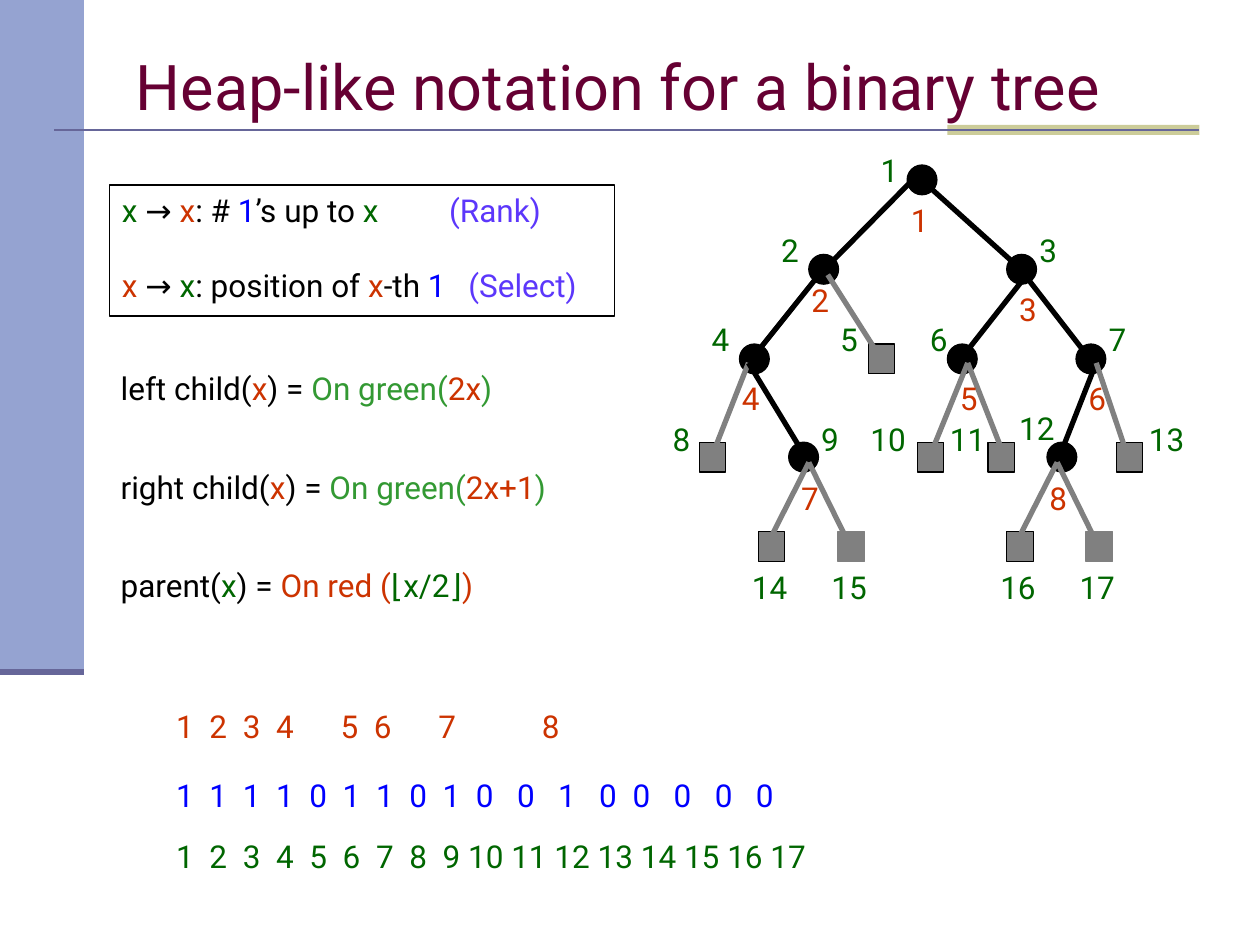
from dataclasses import dataclass
from itertools import accumulate
from typing import Optional

from lxml import etree
from pptx import Presentation, util as u
from pptx.dml.color import RGBColor
from pptx.enum import shapes, text
from pptx.oxml.ns import qn

Pt = u.Pt
FONT = "Roboto"
BLACK = RGBColor(0x00, 0x00, 0x00)
GRAY = RGBColor(0x80, 0x80, 0x80)
GREEN = RGBColor(0x00, 0x66, 0x00)
LIGHT_GREEN = RGBColor(0x33, 0x99, 0x33)
RED = RGBColor(0xCC, 0x33, 0x00)
BLUE = RGBColor(0x00, 0x00, 0xFF)
VIOLET = RGBColor(0x5C, 0x37, 0xFB)
MAROON = RGBColor(0x66, 0x00, 0x33)
BAND = RGBColor(0x95, 0xA3, 0xD1)
RULE = RGBColor(0x66, 0x66, 0x99)
SAND = RGBColor(0xCC, 0xCC, 0x99)

DIGIT, SPACE = 10.11, 4.46  # advance widths at 18 pt
LINE_H = 28.8


@dataclass
class Node:
    number: int
    level: int
    left: float
    label_left: float
    edge: Optional[tuple] = None  # x1, y1, x2, y2 of the line from the parent
    rank: Optional[tuple] = None  # number, left, top; leaves have none
    label_shift: float = 0
    outline: RGBColor = BLACK


NODE_TOPS = [94.3, 145.4, 196.6, 252.7, 303.8]
LABEL_TOPS = [82.8, 128.2, 179.3, 236.2, 321.1]
TREE = [
    Node(1, 0, 518.4, 496.1, rank=(1, 513.4, 111.6)),
    Node(2, 1, 462.2, 439.2, (524.2, 100.1, 468, 157), (2, 456.5, 157)),
    Node(3, 1, 575.3, 586.8, (529.9, 105.8, 586.8, 157), (3, 575.3, 162)),
    Node(4, 2, 422.6, 399.6, (468, 157, 427.7, 207.4), (4, 416.9, 213.1)),
    Node(5, 2, 496.1, 473, (473, 157, 501.8, 202.3)),
    Node(6, 2, 541.4, 524.2, (586.8, 157, 547.2, 207.4), (5, 541.4, 213.1)),
    Node(7, 2, 614.9, 626.4, (581, 151.2, 620.6, 202.3), (6, 614.9, 213.1)),
    Node(8, 3, 399.6, 377.3, (427.7, 207.4, 405.4, 264.2)),
    Node(9, 3, 450.7, 462.2, (427.7, 207.4, 462.2, 264.2), (7, 450.7, 270)),
    Node(10, 3, 524.2, 490.3, (553, 207.4, 529.9, 264.2)),
    Node(11, 3, 564.5, 535.7, (553, 207.4, 575.3, 264.2)),
    Node(12, 3, 598.3, 575.3, (626.4, 207.4, 604.1, 264.2), (8, 592.6, 270), -5.8),
    Node(13, 3, 637.9, 649.4, (626.4, 207.4, 643.7, 258.5)),
    Node(14, 4, 433.4, 422.6, (462.2, 264.2, 439.2, 309.6)),
    Node(15, 4, 478.8, 468, (462.2, 264.2, 484.6, 309.6), outline=GRAY),
    Node(16, 4, 575.3, 564.5, (604.1, 264.2, 581, 309.6)),
    Node(17, 4, 620.6, 609.8, (604.1, 264.2, 626.4, 309.6), outline=GRAY),
]

FORMULAS = [
    (207.4, [("left child(", BLACK), ("x", RED), (") = ", BLACK),
             ("On green(", LIGHT_GREEN), ("2x", RED), (")", LIGHT_GREEN)]),
    (264.2, [("right child(", BLACK), ("x", RED), (") = ", BLACK),
             ("On green(", LIGHT_GREEN), ("2x+1", RED), (")", LIGHT_GREEN)]),
    (319.7, [("parent(", BLACK), ("x", GREEN), (") = ", BLACK),
             ("On red (", RED), ("⌊x/2⌋", GREEN), (")", RED)]),
]
MAPPINGS = [
    [("x ", GREEN), ("→ ", BLACK), ("x", RED), (": # ", BLACK), ("1", BLUE),
     ("’s up to ", BLACK), ("x", GREEN), ("\t(Rank)", VIOLET)],
    [("x ", RED), ("→ ", BLACK), ("x", GREEN), (": position of ", BLACK),
     ("x", RED), ("-th ", BLACK), ("1", BLUE), ("\t(Select)", VIOLET)],
]
# top, colour, values, gap after each value but the last, in space widths
SEQUENCES = [
    (400.3, RED, "1 2 3 4 5 6 7 8", [2, 2, 2, 6, 2, 6, 11]),
    (439.9, BLUE, "1 1 1 1 0 1 1 0 1 0 0 1 0 0 0 0 0", [2] * 9 + [3, 3, 3, 2, 3, 3, 3]),
    (474.5, GREEN, "1 2 3 4 5 6 7 8 9 10 11 12 13 14 15 16 17", [2] * 8 + [1] * 8),
]


def add_shape(s, kind, left, top, width, height, fill=None, line=None):
    sp = s.shapes.add_shape(kind, Pt(left), Pt(top), Pt(width), Pt(height))
    sp.shadow.inherit = False
    if fill is None:
        sp.fill.background()
    else:
        sp.fill.solid()
        sp.fill.fore_color.rgb = fill
    if line is None:
        sp.line.fill.background()
    else:
        sp.line.color.rgb = line
        sp.line.width = Pt(0.75)
    return sp


def add_line(s, x1: float, y1: float, x2: float, y2: float, color: RGBColor, width: float):
    c = s.shapes.add_connector(shapes.MSO_CONNECTOR.STRAIGHT, Pt(x1), Pt(y1), Pt(x2), Pt(y2))
    c.line.color.rgb = color
    c.line.width = Pt(width)
    etree.SubElement(c._element.spPr, qn("a:effectLst"))


def set_tabs(p, stops):
    tabs = etree.SubElement(p._p.get_or_add_pPr(), qn("a:tabLst"))
    for stop in stops:
        etree.SubElement(tabs, qn("a:tab"), pos=str(Pt(stop)), algn="l")


def write(sp, paragraphs, *, size=18, anchor=text.MSO_ANCHOR.TOP, gap=0, tabs=()):
    """Fill a shape with paragraphs, each a list of (text, colour) runs."""
    tf = sp.text_frame
    tf.word_wrap = True
    tf.vertical_anchor = anchor
    for i, runs in enumerate(paragraphs):
        p = tf.add_paragraph() if i else tf.paragraphs[0]
        p.alignment = text.PP_ALIGN.LEFT
        if i and gap:
            p.space_before = Pt(gap)
        if tabs:
            set_tabs(p, tabs[i])
        for words, color in runs:
            r = p.add_run()
            r.text = words
            r.font.name, r.font.size = FONT, Pt(size)
            r.font.color.rgb = color


def add_text(s, left, top, width, height, runs, **fmt):
    sp = s.shapes.add_textbox(Pt(left), Pt(top), Pt(width), Pt(height))
    write(sp, [runs], **fmt)


def add_number(s, number: int, left: float, top: float, color: RGBColor):
    words = str(number)
    add_text(s, left, top, 14.5 + 11.5 * len(words), LINE_H, [(words, color)])


def draw_frame(s):
    rect = shapes.MSO_SHAPE.RECTANGLE
    add_shape(s, rect, 0, 0, 48, 384, BAND)
    add_shape(s, rect, 541.4, 71.3, 144, 5.8, SAND)
    add_line(s, 31, 74.2, 685.4, 74.2, RULE, 1.5)
    add_line(s, 0, 384, 48, 384, RULE, 3.5)
    add_text(s, 70.6, 20.2, 612, 56.9, [("Heap-like notation for a binary tree", MAROON)],
             size=36, anchor=text.MSO_ANCHOR.MIDDLE)


def draw_tree(s):
    for n in TREE:
        top = NODE_TOPS[n.level]
        if n.rank:
            add_shape(s, shapes.MSO_SHAPE.OVAL, n.left, top, 17, 17, BLACK, BLACK)
        else:
            add_shape(s, shapes.MSO_SHAPE.RECTANGLE, n.left, top, 15.1, 17, GRAY, n.outline)
    for n in TREE:
        if n.edge:
            add_line(s, *n.edge, BLACK if n.rank else GRAY, 3)
    for n in TREE:
        add_number(s, n.number, n.label_left, LABEL_TOPS[n.level] + n.label_shift, GREEN)
        if n.rank:
            add_number(s, *n.rank, RED)


def draw_sequences(s):
    for top, color, values, gaps in SEQUENCES:
        values = values.split()
        stops = list(accumulate(len(v) * DIGIT + g * SPACE for v, g in zip(values, gaps)))
        add_text(s, 93.6, top, 461, LINE_H, [("\t".join(values), color)], tabs=[stops])


def main():
    prs = Presentation()
    prs.slide_width, prs.slide_height = Pt(720), Pt(540)
    s = prs.slides.add_slide(prs.slide_layouts[6])
    draw_frame(s)
    draw_tree(s)
    draw_sequences(s)
    for top, runs in FORMULAS:
        add_text(s, 61.9, top, 272, LINE_H, runs)
    box = add_shape(s, shapes.MSO_SHAPE.RECTANGLE, 62.6, 105.8, 288.7, 74.9, line=BLACK)
    write(box, MAPPINGS, gap=21, tabs=[[187], [198]])
    prs.save("out.pptx")


if __name__ == "__main__":
    main()
